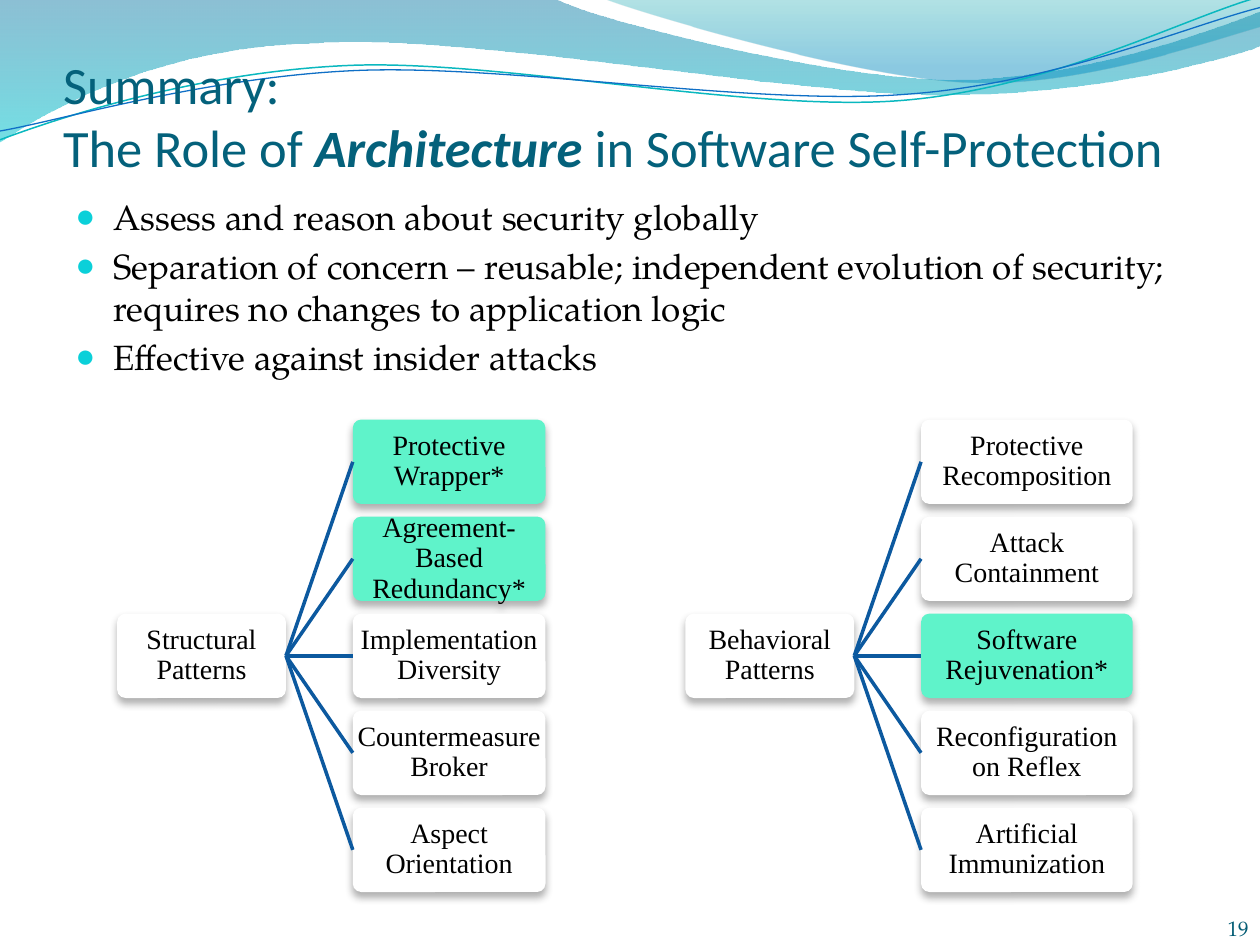
from lxml import etree
from pptx import Presentation
from pptx.dml.color import RGBColor
from pptx.enum.shapes import MSO_CONNECTOR as CONN, MSO_SHAPE as SHAPE
from pptx.enum.text import MSO_ANCHOR as ANCHOR, PP_ALIGN as ALIGN
from pptx.oxml import parse_xml
from pptx.oxml.ns import nsdecls, qn
from pptx.util import Inches, Pt

WHITE = RGBColor(0xFF, 0xFF, 0xFF)
BLACK = RGBColor(0, 0, 0)
MINT = RGBColor(0x5F, 0xF3, 0xCA)
LINK = RGBColor(0x0C, 0x59, 0x9F)
TITLE = RGBColor(0x04, 0x61, 0x7B)
NUMBER = RGBColor(0x04, 0x5D, 0x75)
BULLET = RGBColor(0x0B, 0xD0, 0xD9)
SHADOW = RGBColor(0x5A, 0x5A, 0x5A)
TEAL = RGBColor(0x0A, 0xB8, 0xBF)
BLUE = RGBColor(0x0F, 0x6F, 0xC6)
WAVE_TOP, WAVE_BOTTOM = RGBColor(0, 0x74, 0xA1), RGBColor(0, 0xC6, 0xCF)
CREST_TOP, CREST_BOTTOM = RGBColor(0, 0xA1, 0xA9), RGBColor(0, 0x8B, 0xBF)

HEAD_FONT, BODY_FONT, BOX_FONT = "Calibri", "TeX Gyre Pagella", "Times New Roman"

# Waves: a start point, then line ends (x, y) or Bezier segments (x1, y1, x2, y2, x, y)
WAVE = [(0, 0), (4.4, -0.01), (4.76, 0.17, 6.64, 0.63, 7.58, 0.63),
        (8.53, 0.63, 9.58, 0.26, 10, 0.09), (10.01, 0.36),
        (9.83, 0.44, 8.7, 0.76, 7.46, 0.75), (6.22, 0.75, 3.82, 0.28, 2.57, 0.34),
        (1.29, 0.36, 0.46, 0.83, -0.01, 1.13)]
CREST = [(4.79, -0.01), (5.09, 0.11, 6.82, 0.62, 7.69, 0.65),
         (8.56, 0.69, 9.61, 0.32, 10, 0.21), (10, 0)]
TEAL_CURVE = [(0, 1.11), (0.48, 0.93, 1.58, 0.57, 2.77, 0.52),
              (3.95, 0.47, 5.93, 0.89, 7.13, 0.8), (8.33, 0.71, 9.38, 0.15, 9.98, -0.02)]
BLUE_CURVE = [(0, 1.04), (0.47, 0.96, 1.64, 0.61, 2.83, 0.56),
              (4.03, 0.51, 5.97, 0.84, 7.17, 0.75), (8.36, 0.67, 9.41, 0.21, 10, 0.06)]

BULLETS = [
    "Assess and reason about security globally",
    "Separation of concern – reusable; independent evolution of security; "
    "requires no changes to application logic",
    "Effective against insider attacks",
]

# Trees: left edge, child width, root label, child labels (a star marks a highlight)
TREES = [
    (0.93, 1.53, "Structural Patterns",
     ["Protective Wrapper*", "Agreement-Based Redundancy*", "Implementation Diversity",
      "Countermeasure Broker", "Aspect Orientation"]),
    (5.44, 1.68, "Behavioral Patterns",
     ["Protective Recomposition", "Attack Containment", "Software Rejuvenation*",
      "Reconfiguration on Reflex", "Artificial Immunization"]),
]
ROOT_W, BOX_H, LINK_W = 1.34, 0.67, 0.53
TREE_TOP, PITCH = 3.33, 0.77


def add_outline(s, path, close):
    """Add a freeform through the segment ends, then bend its Bezier segments."""
    ends = [(Inches(seg[-2]), Inches(seg[-1])) for seg in path]
    fb = s.shapes.build_freeform(*ends[0])
    fb.add_line_segments(ends[1:], close=close)
    sp = fb.convert_to_shape()
    sp.shadow.inherit = False
    lines = list(sp._element.iter(qn("a:lnTo")))
    for line, seg in zip(lines, path[1:]):
        if len(seg) == 6:
            curve = etree.Element(qn("a:cubicBezTo"))
            for x, y in zip(seg[::2], seg[1::2]):
                etree.SubElement(curve, qn("a:pt"), x=str(Inches(x) - sp.left),
                                 y=str(Inches(y) - sp.top))
            line.getparent().replace(line, curve)
    return sp


def add_wave(s, path, stops):
    """Add a closed wave; stops are (position %, colour, opacity %)."""
    sp = add_outline(s, path, True)
    sp.line.fill.background()
    sp.fill.gradient()
    grad = sp._element.spPr.find(qn("a:gradFill"))
    gs = "".join(f'<a:gs pos="{pos * 1000}"><a:srgbClr val="{color}">'
                 f'<a:alpha val="{alpha * 1000}"/></a:srgbClr></a:gs>'
                 for pos, color, alpha in stops)
    grad.getparent().replace(grad, parse_xml(
        f'<a:gradFill {nsdecls("a")}><a:gsLst>{gs}</a:gsLst>'
        '<a:lin ang="5400000" scaled="0"/></a:gradFill>'))


def add_curve(s, path, color, width):
    sp = add_outline(s, path, False)
    sp.fill.background()
    sp.line.color.rgb = color
    sp.line.width = Pt(width)


def add_run(p, text, font, size, color, strong=False):
    r = p.add_run()
    r.text = text
    r.font.name, r.font.size = font, Pt(size)
    r.font.color.rgb = color
    if strong:
        r.font.bold = r.font.italic = True


def set_frame(tf, anchor, left, top, right, bottom):
    tf.word_wrap = True
    tf.vertical_anchor = anchor
    tf.margin_left, tf.margin_top = Inches(left), Inches(top)
    tf.margin_right, tf.margin_bottom = Inches(right), Inches(bottom)


def add_text(s, x, y, w, h, anchor, insets):
    tf = s.shapes.add_textbox(Inches(x), Inches(y), Inches(w), Inches(h)).text_frame
    set_frame(tf, anchor, *insets)
    return tf


def set_bullet(p):
    pPr = p._p.get_or_add_pPr()
    pPr.set("marL", str(Inches(0.3)))
    pPr.set("indent", str(Inches(-0.3)))
    color = etree.SubElement(pPr, qn("a:buClr"))
    etree.SubElement(color, qn("a:srgbClr"), val=str(BULLET))
    etree.SubElement(pPr, qn("a:buSzPct"), val="95000")
    etree.SubElement(pPr, qn("a:buFont"), typeface=BOX_FONT)
    etree.SubElement(pPr, qn("a:buChar"), char="●")


def add_box(s, x, y, w, text):
    sp = s.shapes.add_shape(SHAPE.ROUNDED_RECTANGLE,
                            Inches(x), Inches(y), Inches(w), Inches(BOX_H))
    sp.adjustments[0] = 0.1
    sp.fill.solid()
    sp.fill.fore_color.rgb = MINT if text.endswith("*") else WHITE
    sp.line.fill.background()
    sp._element.spPr.append(parse_xml(
        f'<a:effectLst {nsdecls("a")}><a:outerShdw blurRad="{Pt(4.5)}" dist="{Pt(3)}" '
        f'dir="5400000" rotWithShape="0"><a:srgbClr val="{SHADOW}">'
        '<a:alpha val="48000"/></a:srgbClr></a:outerShdw></a:effectLst>'))
    set_frame(sp.text_frame, ANCHOR.MIDDLE, 0.01, 0.01, 0.01, 0.01)
    p = sp.text_frame.paragraphs[0]
    p.alignment, p.line_spacing = ALIGN.CENTER, 0.9
    add_run(p, text, BOX_FONT, 16, BLACK)
    return sp


def add_link(s, root, child):
    c = s.shapes.add_connector(CONN.STRAIGHT, 0, 0, 0, 0)
    c.begin_connect(root, 3)
    c.end_connect(child, 1)
    c.line.color.rgb = LINK
    c.line.width = Pt(2)
    etree.SubElement(c._element.spPr, qn("a:effectLst"))


def add_tree(s, x, child_w, root_text, labels):
    root = add_box(s, x, TREE_TOP + PITCH * (len(labels) - 1) / 2, ROOT_W, root_text)
    for i, label in enumerate(labels):
        child = add_box(s, x + ROOT_W + LINK_W, TREE_TOP + i * PITCH, child_w, label)
        add_link(s, root, child)


def main():
    prs = Presentation()
    prs.slide_width, prs.slide_height = Inches(10), Inches(7.5)
    s = prs.slides.add_slide(prs.slide_layouts[6])

    # Header waves
    add_wave(s, WAVE, [(0, WAVE_TOP, 45), (100, WAVE_BOTTOM, 55)])
    add_wave(s, CREST, [(0, CREST_TOP, 30), (80, CREST_BOTTOM, 45)])
    add_curve(s, TEAL_CURVE, TEAL, 0.85)
    add_curve(s, BLUE_CURVE, BLUE, 0.75)

    # Title
    p = add_text(s, 0.5, 0.25, 9.08, 1.16, ANCHOR.BOTTOM, (0, 0.05, 0, 0)).paragraphs[0]
    add_run(p, "Summary: ", HEAD_FONT, 30, TITLE)
    p.add_line_break()
    add_run(p, "The Role of ", HEAD_FONT, 30, TITLE)
    add_run(p, "Architecture", HEAD_FONT, 30, TITLE, strong=True)
    add_run(p, " in Software Self-Protection", HEAD_FONT, 30, TITLE)

    # Bullets
    tf = add_text(s, 0.5, 1.5, 9, 5.25, ANCHOR.TOP, (0.1, 0.05, 0.1, 0.05))
    for i, text in enumerate(BULLETS):
        p = tf.add_paragraph() if i else tf.paragraphs[0]
        p.space_before = Pt(4)
        set_bullet(p)
        add_run(p, text, BODY_FONT, 20, BLACK)

    # Pattern trees
    for tree in TREES:
        add_tree(s, *tree)

    # Slide number
    p = add_text(s, 9.08, 7.07, 0.83, 0.4, ANCHOR.BOTTOM, (0, 0, 0, 0)).paragraphs[0]
    p.alignment = ALIGN.RIGHT
    add_run(p, "19", BODY_FONT, 12, NUMBER)

    prs.save("out.pptx")


if __name__ == "__main__":
    main()
